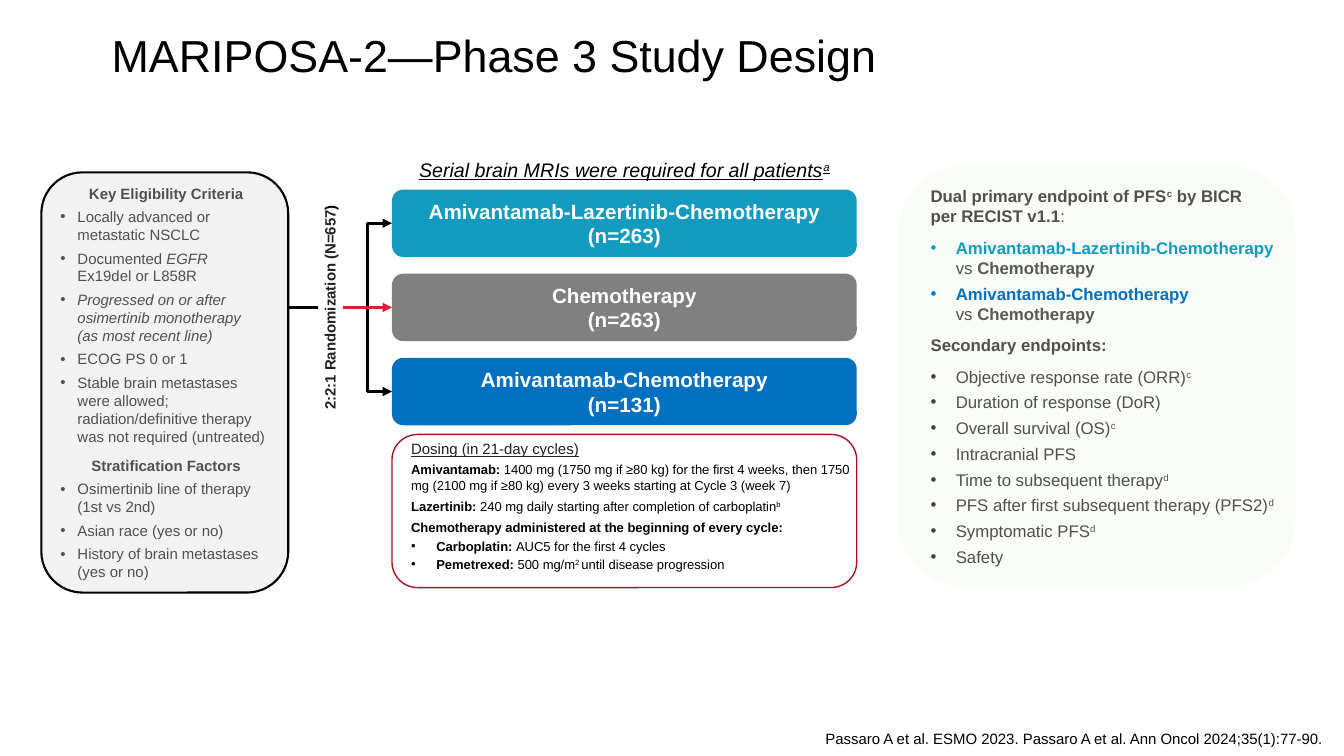
from dataclasses import dataclass
from typing import Any, NamedTuple, Optional

import pptx
import pptx.dml.color
import pptx.enum.shapes
import pptx.enum.text
import pptx.oxml
import pptx.oxml.ns
import pptx.util

Pt = pptx.util.Pt
ALIGN = pptx.enum.text.PP_ALIGN
ANCHOR = pptx.enum.text.MSO_ANCHOR
CONNECTOR = pptx.enum.shapes.MSO_CONNECTOR
ROUNDED = pptx.enum.shapes.MSO_SHAPE.ROUNDED_RECTANGLE
TOP, LEFT, BOTTOM, RIGHT = range(4)


@dataclass(frozen=True)
class Theme:
    font: str = "Arial"
    black: str = "000000"
    white: str = "FFFFFF"
    ink: str = "212121"
    body: str = "505050"
    comparator: str = "595959"
    bullet: str = "404040"
    teal: str = "129ABF"
    gray: str = "808080"
    blue: str = "0070C0"
    red: str = "DC1E34"
    dark_red: str = "A31626"
    panel: str = "F2F2F2"
    pale_green: str = "EAF4D8"
    title: float = 32
    arm: float = 14.7
    caption: float = 14
    endpoint: float = 12
    small: float = 10.7
    dosing: float = 9.3


THEME = Theme()


class Box(NamedTuple):
    left: float
    top: float
    width: float
    height: float


class Run(NamedTuple):
    text: str
    bold: Optional[bool] = None
    italic: Optional[bool] = None
    color: Optional[str] = None
    superscript: bool = False


@dataclass(frozen=True)
class Line:
    """One paragraph; indent above zero makes it a bullet."""
    runs: tuple[Run, ...]
    size: float
    color: str = THEME.black
    bold: bool = False
    italic: bool = False
    underline: bool = False
    align: Any = ALIGN.LEFT
    before: float = 0
    after: float = 0
    spacing: float = 1.0
    indent: float = 0
    bullet_color: Optional[str] = None


class Arm(NamedTuple):
    name: str
    patients: str
    color: str


def rgb(value: str) -> pptx.dml.color.RGBColor:
    return pptx.dml.color.RGBColor.from_string(value)


def add_xml(parent: Any, tag: str, **attributes: str) -> Any:
    element = pptx.oxml.parse_xml(f"<a:{tag} {pptx.oxml.ns.nsdecls('a')}/>")
    for name, value in attributes.items():
        element.set(name, value)
    parent.append(element)
    return element


def write_run(paragraph: Any, item: Run) -> None:
    for index, piece in enumerate(item.text.split("\n")):
        if index:
            paragraph.add_line_break()
        if not piece:
            continue
        run = paragraph.add_run()
        run.text = piece
        if item.bold is not None:
            run.font.bold = item.bold
        if item.italic is not None:
            run.font.italic = item.italic
        if item.color:
            run.font.color.rgb = rgb(item.color)
        if item.superscript:
            run._r.get_or_add_rPr().set("baseline", "30000")


def write_lines(shape: Any, lines: list[Line], insets: tuple[float, ...] = (7.2, 3.6, 7.2, 3.6),
                anchor: Any = ANCHOR.TOP) -> None:
    """Fill a shape with paragraphs; insets run left, top, right, bottom."""
    frame = shape.text_frame
    frame.word_wrap = True
    frame.vertical_anchor = anchor
    frame.margin_left, frame.margin_top, frame.margin_right, frame.margin_bottom = map(Pt, insets)
    for index, line in enumerate(lines):
        paragraph = frame.add_paragraph() if index else frame.paragraphs[0]
        if line.indent:
            properties = paragraph._p.get_or_add_pPr()
            properties.set("marL", str(Pt(line.indent)))
            properties.set("indent", str(-Pt(line.indent)))
            if line.bullet_color:
                add_xml(add_xml(properties, "buClr"), "srgbClr", val=line.bullet_color)
            add_xml(properties, "buFont", typeface=THEME.font)
            add_xml(properties, "buChar", char="•")
        paragraph.alignment = line.align
        paragraph.line_spacing = line.spacing
        paragraph.space_before = Pt(line.before if index else 0)
        paragraph.space_after = Pt(line.after)
        font = paragraph.font
        font.name, font.size = THEME.font, Pt(line.size)
        font.bold, font.italic, font.underline = line.bold, line.italic, line.underline
        font.color.rgb = rgb(line.color)
        for item in line.runs:
            write_run(paragraph, item)


def add_text(slide: Any, box: Box, lines: list[Line], **layout: Any) -> Any:
    shape = slide.shapes.add_textbox(*map(Pt, box))
    write_lines(shape, lines, **layout)
    return shape


def add_panel(slide: Any, box: Box, fill: Optional[str] = None, outline: Optional[str] = None,
              weight: float = 1) -> Any:
    shape = slide.shapes.add_shape(ROUNDED, *map(Pt, box))
    shape.shadow.inherit = False
    if fill:
        shape.fill.solid()
        shape.fill.fore_color.rgb = rgb(fill)
    else:
        shape.fill.background()
    if outline:
        shape.line.color.rgb = rgb(outline)
        shape.line.width = Pt(weight)
    else:
        shape.line.fill.background()
    return shape


def add_link(slide: Any, kind: Any, color: str, target: Any, source: Any = None,
             start: tuple[float, float] = (0, 0), arrow: bool = True) -> None:
    """Link the source's right side, or a start point, to the target's left side."""
    link = slide.shapes.add_connector(kind, *map(Pt, start), *map(Pt, start))
    if source is not None:
        link.begin_connect(source, RIGHT)
    link.end_connect(target, LEFT)
    link.line.color.rgb = rgb(color)
    link.line.width = Pt(2.25)
    if arrow:
        add_xml(link.line._get_or_add_ln(), "tailEnd", type="triangle")
    add_xml(link._element.spPr, "effectLst")


def criterion(*runs: Run, italic: bool = False) -> Line:
    return Line(runs, THEME.small, THEME.body, italic=italic, before=4, indent=12.25)


def criteria_heading(text: str, before: float = 0) -> Line:
    return Line((Run(text),), THEME.small, THEME.body, bold=True, align=ALIGN.CENTER, before=before)


def comparison(treatment: str, color: str) -> Line:
    runs = (Run(treatment, True), Run("vs ", color=THEME.body),
            Run("Chemotherapy", True, color=THEME.comparator))
    return Line(runs, THEME.endpoint, color, before=4, indent=18)


def secondary(text: str, note: str = "") -> Line:
    runs = (Run(text), Run(note, superscript=True))
    return Line(runs, THEME.endpoint, THEME.body, before=4, indent=18, bullet_color=THEME.bullet)


def dosing(*runs: Run, after: float = 4, indent: float = 0) -> Line:
    return Line(runs, THEME.dosing, after=after, indent=indent)


ARMS = [Arm("Amivantamab-Lazertinib-Chemotherapy", "(n=263)", THEME.teal),
        Arm("Chemotherapy", "(n=263)", THEME.gray),
        Arm("Amivantamab-Chemotherapy", "(n=131)", THEME.blue)]
ELIGIBILITY = [
    criteria_heading("Key Eligibility Criteria"),
    criterion(Run("Locally advanced or metastatic NSCLC")),
    criterion(Run("Documented"), Run(" EGFR \n", italic=True), Run("Ex19del or L858R")),
    criterion(Run("Progressed on or after osimertinib monotherapy \n(as most recent line)"), italic=True),
    criterion(Run("ECOG PS 0 or 1")),
    criterion(Run("Stable brain metastases were allowed; radiation/definitive therapy "
                  "was not required (untreated)")),
    criteria_heading("Stratification Factors", 8),
    criterion(Run("Osimertinib line of therapy (1st vs 2nd)")),
    criterion(Run("Asian race (yes or no)")),
    criterion(Run("History of brain metastases (yes or no)"))]
ENDPOINTS = [
    Line((Run("Dual primary endpoint of PFS", True), Run("c", True, superscript=True),
          Run(" by BICR \nper RECIST v1.1", True), Run(":")), THEME.endpoint, THEME.body, after=4),
    comparison("Amivantamab-Lazertinib-Chemotherapy ", THEME.teal),
    comparison("Amivantamab-Chemotherapy \n", THEME.blue),
    Line((Run("Secondary endpoints:"),), THEME.endpoint, THEME.body, bold=True, before=8, after=4),
    secondary("Objective response rate (ORR)", "c"), secondary("Duration of response (DoR)"),
    secondary("Overall survival (OS)", "c"), secondary("Intracranial PFS"),
    secondary("Time to subsequent therapy", "d"),
    secondary("PFS after first subsequent therapy (PFS2)", "d"),
    secondary("Symptomatic PFS", "d"), secondary("Safety")]
DOSING = [
    dosing(Run("Amivantamab: ", True),
           Run("1400 mg (1750 mg if ≥80 kg) for the first 4 weeks, then 1750 mg "
               "(2100 mg if ≥80 kg) every 3 weeks starting at Cycle 3 (week 7)")),
    dosing(Run("Lazertinib:", True), Run(" 240 mg daily starting after completion of carboplatin"),
           Run("b", superscript=True)),
    dosing(Run("Chemotherapy administered at the beginning of every cycle:", True), after=2),
    dosing(Run("Carboplatin: ", True), Run("AUC5 for the first 4 cycles"), after=2, indent=18),
    dosing(Run("Pemetrexed: ", True), Run("500 mg/m"), Run("2 ", superscript=True),
           Run("until disease progression"), after=2, indent=18)]


def draw_arms(slide: Any) -> None:
    randomization = add_text(
        slide, Box(226.8, 135.4, 18, 168.4),
        [Line((Run("2:2:1 Randomization (N=657"), Run(")", color=THEME.black)), THEME.small,
              THEME.ink, bold=True, align=ALIGN.CENTER)], insets=(2.2, 0.7, 2.9, 0.7))
    randomization.text_frame._txBody.bodyPr.set("vert", "vert270")
    panels = []
    for index, arm in enumerate(ARMS):
        panel = add_panel(slide, Box(280, 135.4 + 60.1 * index, 332, 48.2), arm.color)
        write_lines(panel, [Line((Run(text),), THEME.arm, THEME.white, bold=True, align=ALIGN.CENTER)
                            for text in (arm.name, arm.patients)], anchor=ANCHOR.MIDDLE)
        panels.append(panel)
    upper, middle, lower = panels
    for panel in (upper, lower):
        add_link(slide, CONNECTOR.ELBOW, THEME.black, panel, randomization)
    add_link(slide, CONNECTOR.STRAIGHT, THEME.red, middle, randomization)
    add_link(slide, CONNECTOR.STRAIGHT, THEME.black, randomization, start=(198, 219.6), arrow=False)


def main() -> None:
    presentation = pptx.Presentation()
    presentation.slide_width, presentation.slide_height = Pt(960), Pt(540)
    slide = presentation.slides.add_slide(presentation.slide_layouts[6])
    add_text(slide, Box(72.7, 23.8, 882.7, 48.2),
             [Line((Run("MARIPOSA-2—Phase 3 Study Design"),), THEME.title, spacing=0.8)])
    draw_arms(slide)
    add_text(slide, Box(286.6, 310.3, 243.4, 20.2),
             [Line((Run("Dosing (in 21-day cycles)"),), THEME.small, THEME.ink, underline=True)])
    add_text(slide, Box(286.6, 326.2, 332.6, 87.1), DOSING)
    add_panel(slide, Box(280, 310.3, 332, 109.4), outline=THEME.dark_red)
    eligibility = add_panel(slide, Box(29.5, 123.1, 176.4, 300.2), THEME.panel, THEME.black, 1.5)
    write_lines(eligibility, ELIGIBILITY, (5, 3.6, 2.9, 3.6), ANCHOR.MIDDLE)
    endpoints = add_panel(slide, Box(641.5, 118.8, 283.7, 300.2), THEME.pale_green)
    add_xml(endpoints.fill._xPr.find(".//" + pptx.oxml.ns.qn("a:srgbClr")), "alpha", val="20000")
    write_lines(endpoints, ENDPOINTS, (9.4, 0, 0, 0), ANCHOR.MIDDLE)
    add_text(slide, Box(280, 109.4, 332, 24.5),
             [Line((Run("Serial brain MRIs were required for all patients"), Run("a", superscript=True)),
                   THEME.caption, italic=True, underline=True, align=ALIGN.CENTER)])
    add_text(slide, Box(582.5, 517.7, 377.3, 20.2),
             [Line((Run("Passaro A et al. ESMO 2023. Passaro A et al. Ann Oncol 2024;35(1):77-90."),),
                   THEME.small)])
    presentation.save("out.pptx")


if __name__ == "__main__":
    main()
